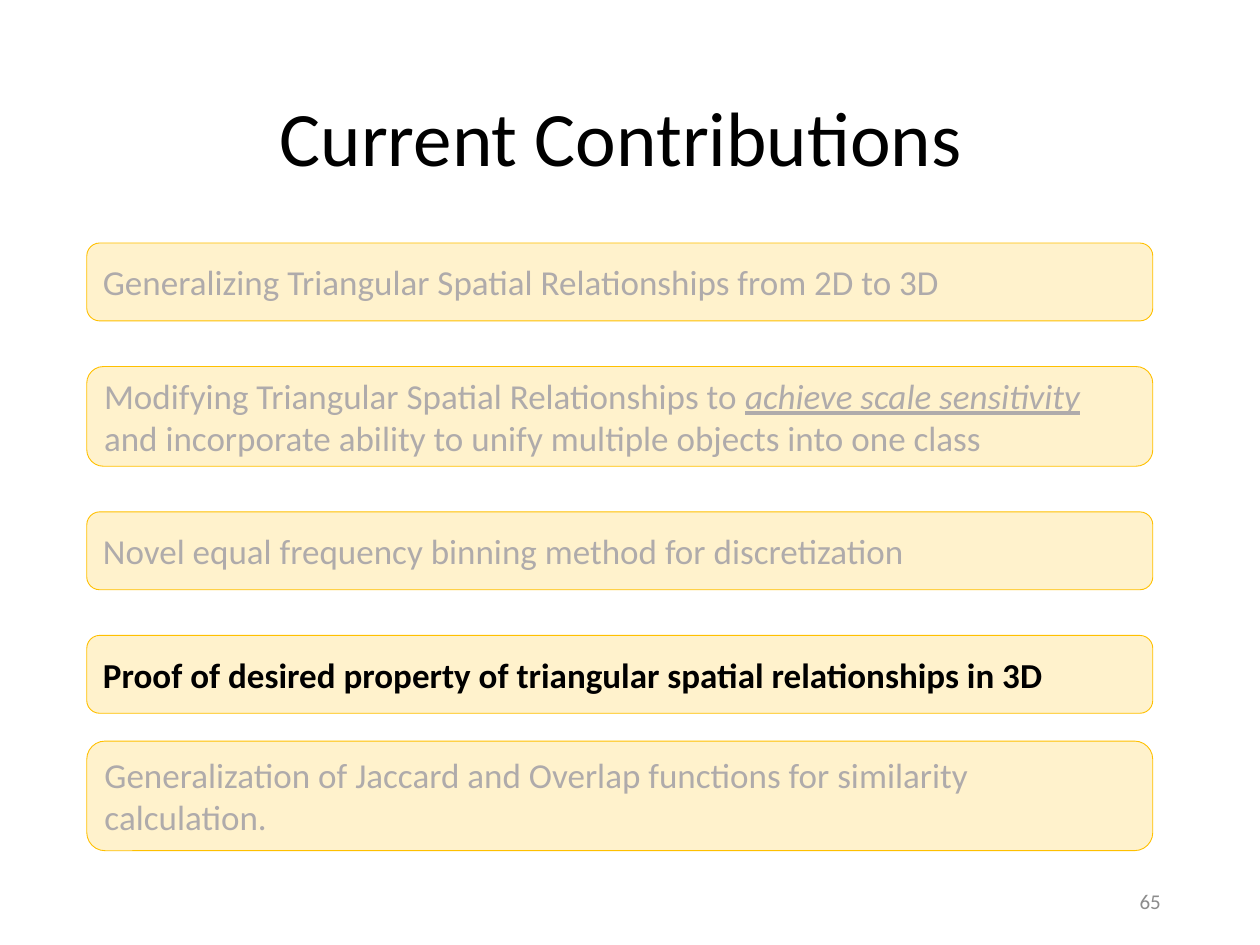
"""Build the "Current Contributions" slide with one highlighted contribution."""
from dataclasses import dataclass

from pptx import Presentation
from pptx.dml.color import RGBColor
from pptx.enum.shapes import MSO_SHAPE
from pptx.enum.text import MSO_ANCHOR, PP_ALIGN
from pptx.util import Cm, Pt


@dataclass(frozen=True)
class Theme:
    font: str = "Calibri"
    title_size: Pt = Pt(44)
    body_size: Pt = Pt(20)
    number_size: Pt = Pt(12)
    strong: RGBColor = RGBColor(0x00, 0x00, 0x00)
    faded: RGBColor = RGBColor(0xAF, 0xAB, 0xAB)
    number: RGBColor = RGBColor(0x8C, 0x8C, 0x8C)
    fill: RGBColor = RGBColor(0xFF, 0xF2, 0xCC)
    line: RGBColor = RGBColor(0xFF, 0xC0, 0x00)


def write_text(shape, runs, size, color, alignment):
    frame = shape.text_frame
    frame.word_wrap = True
    frame.vertical_anchor = MSO_ANCHOR.MIDDLE
    paragraph = frame.paragraphs[0]
    paragraph.alignment = alignment
    paragraph.font.name = theme.font
    paragraph.font.size = size
    paragraph.font.color.rgb = color
    for text, emphasized in runs:
        run = paragraph.add_run()
        run.text = text
        if emphasized:
            run.font.italic = True
            run.font.underline = True
    return paragraph


theme = Theme()
presentation = Presentation()
presentation.slide_width = Cm(25.4)
presentation.slide_height = Cm(19.05)
slide = presentation.slides.add_slide(presentation.slide_layouts[6])

left = Cm(1.75)
title = slide.shapes.add_textbox(left, Cm(1.02), Cm(21.89), Cm(3.68))
heading = write_text(title, [("Current Contributions ", False)],
                     theme.title_size, theme.strong, PP_ALIGN.CENTER)
heading.line_spacing = 0.9

page_number = slide.shapes.add_textbox(Cm(17.93), Cm(17.65), Cm(5.72), Cm(1.02))
write_text(page_number, [("65", False)], theme.number_size, theme.number, PP_ALIGN.RIGHT)

single_height, wide_gap, narrow_gap = Cm(1.57), Cm(0.92), Cm(0.56)
contributions = [
    ([("Generalizing Triangular Spatial Relationships from 2D to 3D", False)],
     single_height, wide_gap, False),
    ([("Modifying Triangular Spatial Relationships to ", False),
      ("achieve scale sensitivity", True),
      (" and incorporate ability to unify multiple objects into one class", False)],
     Cm(2.01), wide_gap, False),
    ([("Novel equal frequency binning method for discretization", False)],
     single_height, wide_gap, False),
    ([("Proof of desired property of triangular spatial relationships in 3D", False)],
     single_height, narrow_gap, True),
    ([("Generalization of Jaccard and Overlap functions for similarity calculation.", False)],
     Cm(2.21), narrow_gap, False),
]

top = Cm(4.9)
for runs, height, gap, current in contributions:
    box = slide.shapes.add_shape(MSO_SHAPE.ROUNDED_RECTANGLE, left, top, Cm(21.49), height)
    box.shadow.inherit = False
    box.fill.solid()
    box.fill.fore_color.rgb = theme.fill
    box.line.color.rgb = theme.line
    box.line.width = Pt(0.5)
    color = theme.strong if current else theme.faded
    paragraph = write_text(box, runs, theme.body_size, color, PP_ALIGN.LEFT)
    paragraph.font.bold = current
    top += height + gap

presentation.save("out.pptx")
